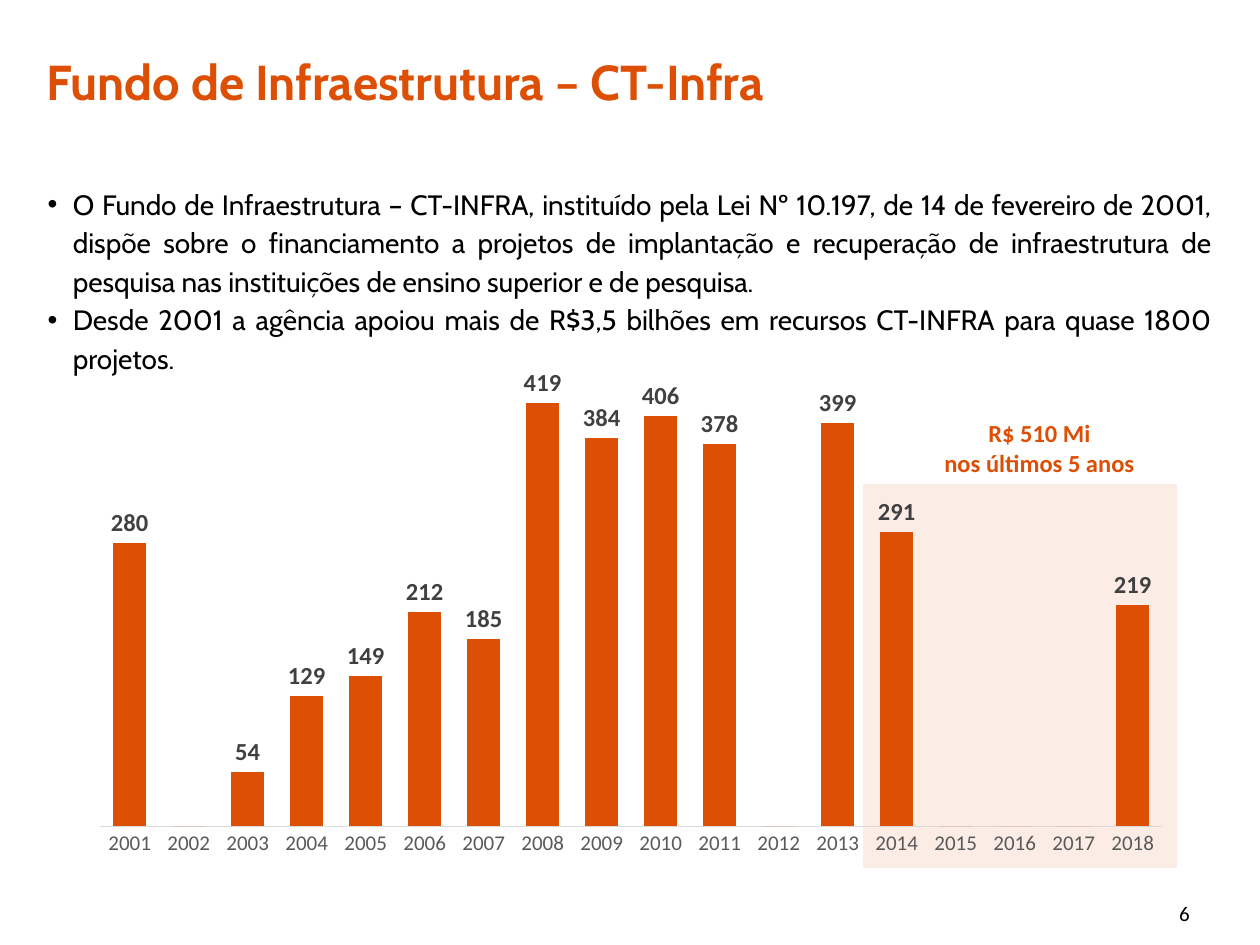
"""Build the CT-Infra fund slide with its yearly column chart."""
from lxml import etree
from pptx import Presentation
from pptx import util as u
from pptx.chart import data
from pptx.dml.color import RGBColor
from pptx.enum import chart as charts, shapes, text
from pptx.oxml import parse_xml
from pptx.oxml.ns import nsdecls, qn

COLORS = {"orange": "DD4F05", "black": "000000", "label": "404040",
          "axis": "595959", "line": "D9D9D9"}


def style(font, color, **values):
    font.color.rgb = RGBColor.from_string(COLORS[color])
    for name, value in values.items():
        setattr(font, name, value)


def write(box, place, lines, color, align, anchor=text.MSO_ANCHOR.TOP, wrap=True, **font):
    for side, length in zip(("left", "top", "width", "height"), place):
        setattr(box, side, u.Inches(length))
    frame = box.text_frame
    frame.text = "\n".join(lines)
    frame.auto_size = text.MSO_AUTO_SIZE.NONE
    frame.word_wrap = wrap
    frame.vertical_anchor = anchor
    for para in frame.paragraphs:
        para.alignment = align
        for span in para.runs:
            style(span.font, color, **font)
    return frame


deck = Presentation()
deck.slide_width, deck.slide_height = u.Inches(10), u.Inches(7.5)
page = deck.slides.add_slide(deck.slide_layouts[5])

write(page.shapes.title, (0.27, 0.01, 9.73, 1.26), ["Fundo de Infraestrutura – CT-Infra"],
      "orange", text.PP_ALIGN.LEFT, text.MSO_ANCHOR.MIDDLE,
      name="Cabin", size=u.Pt(28), bold=True)

highlight = page.shapes.add_shape(shapes.MSO_SHAPE.RECTANGLE, u.Inches(6.85), u.Inches(3.84),
                                  u.Inches(2.49), u.Inches(3.05))
highlight.shadow.inherit = False
highlight.line.fill.background()
highlight.fill.solid()
highlight.fill.fore_color.rgb = RGBColor.from_string(COLORS["orange"])
tint = highlight.fill._xPr.find(qn("a:solidFill"))[0]
etree.SubElement(tint, qn("a:alpha"), val="10000")

figures = data.CategoryChartData(number_format="#,##0")
figures.categories = [str(year) for year in range(2001, 2019)]
figures.add_series("Recursos", (280, 0, 54, 129, 149, 212, 185, 419, 384, 406, 378, 0,
                                399, 291, 0, 0, 0, 219))
chart = page.shapes.add_chart(charts.XL_CHART_TYPE.COLUMN_CLUSTERED, u.Inches(0.62), u.Inches(2.87),
                              u.Inches(8.78), u.Inches(4.01), figures).chart
chart.has_legend = False
chart.has_title = False
style(chart.font, "black", name="Calibri", size=u.Pt(10))
chart.value_axis.visible = False
chart.value_axis.has_major_gridlines = False
chart.value_axis.minimum_scale, chart.value_axis.maximum_scale = 0, 450

years = chart.category_axis
years.major_tick_mark = charts.XL_TICK_MARK.NONE
years.format.line.color.rgb = RGBColor.from_string(COLORS["line"])
years.format.line.width = u.Pt(0.75)
style(years.tick_labels.font, "axis", name="Calibri", size=u.Pt(12))

plot = chart.plots[0]
plot.gap_width, plot.overlap, plot.vary_by_categories = 80, -27, False
series = plot.series[0]
series.format.fill.solid()
series.format.fill.fore_color.rgb = RGBColor.from_string(COLORS["orange"])
labels = series.data_labels
for name, value in {"show_value": True, "number_format": "#,##0;;", "number_format_is_linked": False,
                    "position": charts.XL_LABEL_POSITION.OUTSIDE_END}.items():
    setattr(labels, name, value)
style(labels.font, "label", name="Calibri", size=u.Pt(14), bold=True)

area = chart._chartSpace.chart.plotArea
for old in area.findall(qn("c:layout")):
    area.remove(old)
area.insert(0, parse_xml(
    f'<c:layout {nsdecls("c")}><c:manualLayout><c:layoutTarget val="inner"/>'
    '<c:xMode val="edge"/><c:yMode val="edge"/><c:x val="0.02"/><c:y val="0.02"/>'
    '<c:w val="0.96"/><c:h val="0.9"/></c:manualLayout></c:layout>'))

body = write(page.shapes.add_textbox(0, 0, 0, 0), (0.28, 1.4, 9.44, 1.75), [
    "O Fundo de Infraestrutura – CT-INFRA, instituído pela Lei Nº 10.197, de 14 de fevereiro de 2001, "
    "dispõe sobre o financiamento a projetos de implantação e recuperação de infraestrutura de "
    "pesquisa nas instituições de ensino superior e de pesquisa.",
    "Desde 2001 a agência apoiou mais de R$3,5 bilhões em recursos CT-INFRA para quase 1800 projetos.",
], "black", text.PP_ALIGN.JUSTIFY, name="Cabin", size=u.Pt(16))
for para in body.paragraphs:
    para.line_spacing = u.Pt(22)
    props = para._p.get_or_add_pPr()
    props.set("marL", str(u.Inches(0.2)))
    props.set("indent", str(u.Inches(-0.2)))
    etree.SubElement(props, qn("a:buFont"), typeface="Arial")
    etree.SubElement(props, qn("a:buChar"), char="•")

write(page.shapes.add_textbox(0, 0, 0, 0), (7.28, 3.27, 1.94, 0.57),
      ["R$ 510 Mi", "nos últimos 5 anos"], "orange", text.PP_ALIGN.CENTER,
      name="Calibri", size=u.Pt(14), bold=True)
write(page.shapes.add_textbox(0, 0, 0, 0), (9.26, 7.1, 0.48, 0.3), ["6"], "black",
      text.PP_ALIGN.LEFT, wrap=False, name="Calibri", size=u.Pt(12))

deck.save("out.pptx")
